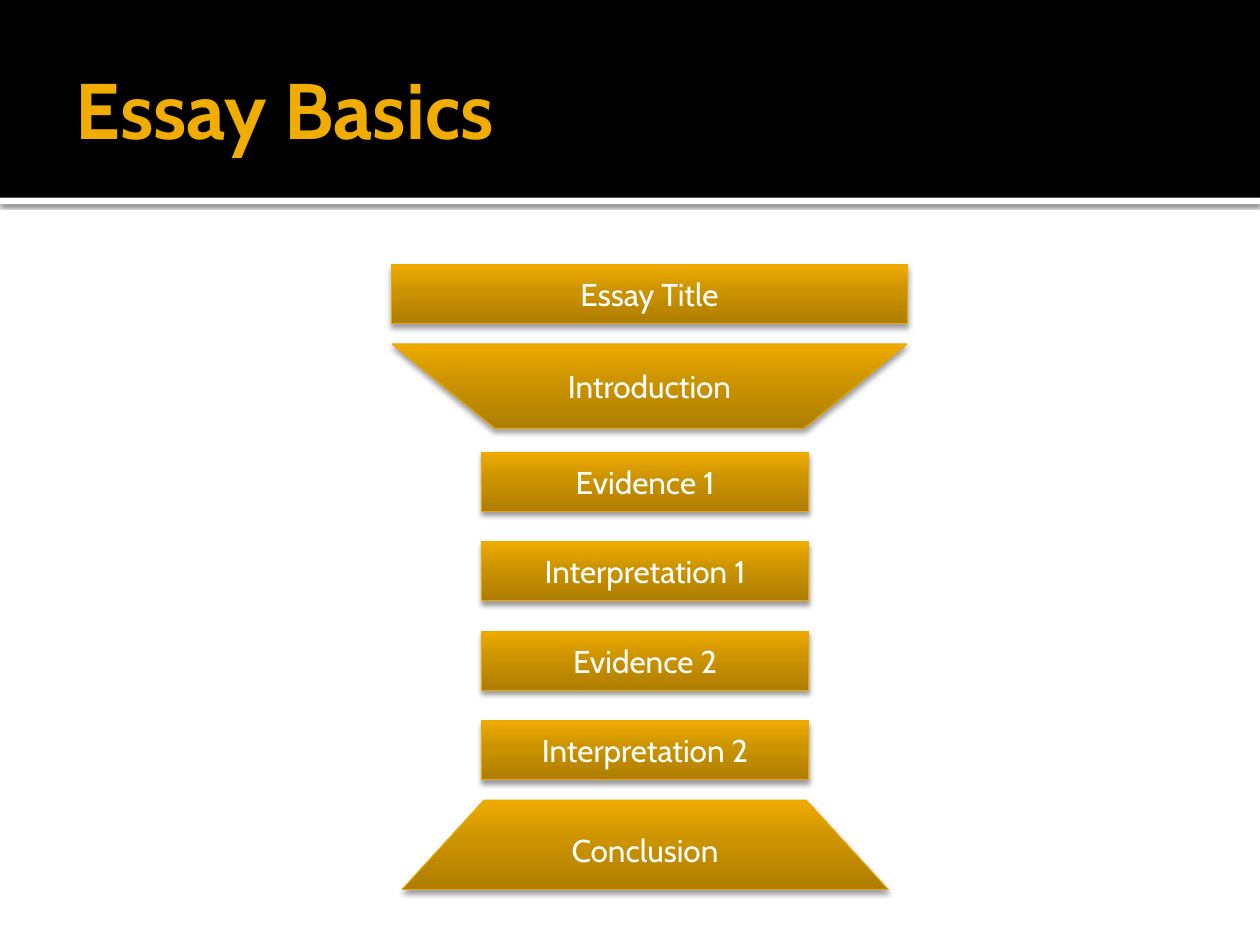
from copy import deepcopy

from lxml import etree
from pptx import Presentation
from pptx.dml.color import RGBColor
from pptx.enum.shapes import MSO_SHAPE
from pptx.enum.text import MSO_ANCHOR, PP_ALIGN
from pptx.oxml.ns import qn
from pptx.util import Inches, Pt

FONT = "Cabin"
BLACK = RGBColor(0x00, 0x00, 0x00)
WHITE = RGBColor(0xFF, 0xFF, 0xFF)
GOLD = RGBColor(0xF0, 0xAD, 0x00)
EDGE = RGBColor(0xEB, 0xA9, 0x00)
GRADIENT = [
    (0, RGBColor(0xAE, 0x7D, 0x00)),
    (0.55, RGBColor(0xCC, 0x93, 0x00)),
    (1, RGBColor(0xEE, 0xAB, 0x00)),
]

# Content
TITLE = "Essay Basics"
BODY = ["Evidence 1", "Interpretation 1", "Evidence 2", "Interpretation 2"]

# Layout in inches
WIDTH, HEIGHT = 10, 7.5
BAND_H, RULE_H = 1.57, 0.05
BAR_H = 0.47
WIDE_X, WIDE_W = 3.11, 4.09
BODY_X, BODY_Y, BODY_W, BODY_STEP = 3.82, 3.59, 2.6, 0.71

# Essay parts: label, preset, (left, top, width, height)
PARTS = [
    ("Essay Title", MSO_SHAPE.RECTANGLE, (WIDE_X, 2.1, WIDE_W, BAR_H)),
    ("Introduction", MSO_SHAPE.FLOWCHART_MANUAL_OPERATION,
     (WIDE_X, 2.73, WIDE_W, 0.67)),
    *[(label, MSO_SHAPE.RECTANGLE,
       (BODY_X, BODY_Y + i * BODY_STEP, BODY_W, BAR_H))
      for i, label in enumerate(BODY)],
    ("Conclusion", MSO_SHAPE.TRAPEZOID, (3.19, 6.35, 3.86, 0.71)),
]


def add_shadow(sp, alpha, blur, dist):
    """Give the shape a black shadow falling straight down."""
    sp.shadow.inherit = False
    effects = sp._element.spPr.find(qn("a:effectLst"))
    shadow = etree.SubElement(
        effects, qn("a:outerShdw"), blurRad=str(Pt(blur)), dist=str(Pt(dist)),
        dir="5400000", algn="ctr", rotWithShape="0")
    color = etree.SubElement(shadow, qn("a:srgbClr"), val=str(BLACK))
    etree.SubElement(color, qn("a:alpha"), val=str(alpha * 1000))


def fill_gradient(sp):
    """Fill from dark at the bottom to bright at the top."""
    sp.fill.gradient()
    sp.fill.gradient_angle = 90
    stops = sp._element.spPr.find(qn("a:gradFill")).find(qn("a:gsLst"))
    stops.append(deepcopy(stops[-1]))
    for stop, (position, color) in zip(sp.fill.gradient_stops, GRADIENT):
        stop.position = position
        stop.color.rgb = color


def add_shape(s, preset, box):
    sp = s.shapes.add_shape(preset, *map(Inches, box))
    sp.shadow.inherit = False
    return sp


def set_text(sp, text, size, color, align, bold=False):
    tf = sp.text_frame
    tf.word_wrap = True
    tf.vertical_anchor = MSO_ANCHOR.MIDDLE
    p = tf.paragraphs[0]
    p.text = text
    p.alignment = align
    font = p.runs[0].font
    font.name, font.size, font.bold = FONT, Pt(size), bold
    font.color.rgb = color


def add_strip(s, top, height, color):
    sp = add_shape(s, MSO_SHAPE.RECTANGLE, (0, top, WIDTH, height))
    sp.fill.solid()
    sp.fill.fore_color.rgb = color
    sp.line.fill.background()
    return sp


def main():
    prs = Presentation()
    prs.slide_width, prs.slide_height = Inches(WIDTH), Inches(HEIGHT)
    s = prs.slides.add_slide(prs.slide_layouts[6])

    # Header band with a white rule below
    rule = add_strip(s, BAND_H, RULE_H, WHITE)
    add_shadow(rule, alpha=60, blur=2.5, dist=0.8)
    add_strip(s, 0, BAND_H, BLACK)

    # Title
    title = s.shapes.add_textbox(*map(Inches, (0.5, 0.17, 9, 1.37)))
    title.text_frame.margin_right = Inches(0.05)
    set_text(title, TITLE, 45, GOLD, PP_ALIGN.LEFT, bold=True)

    # Essay parts from top to bottom
    for label, preset, box in PARTS:
        sp = add_shape(s, preset, box)
        if preset == MSO_SHAPE.TRAPEZOID:
            sp.adjustments[0] = 0.92
        fill_gradient(sp)
        sp.line.color.rgb = EDGE
        sp.line.width = Pt(0.5)
        add_shadow(sp, alpha=38, blur=3.1, dist=2)
        set_text(sp, label, 18, WHITE, PP_ALIGN.CENTER)

    prs.save("out.pptx")


if __name__ == "__main__":
    main()
